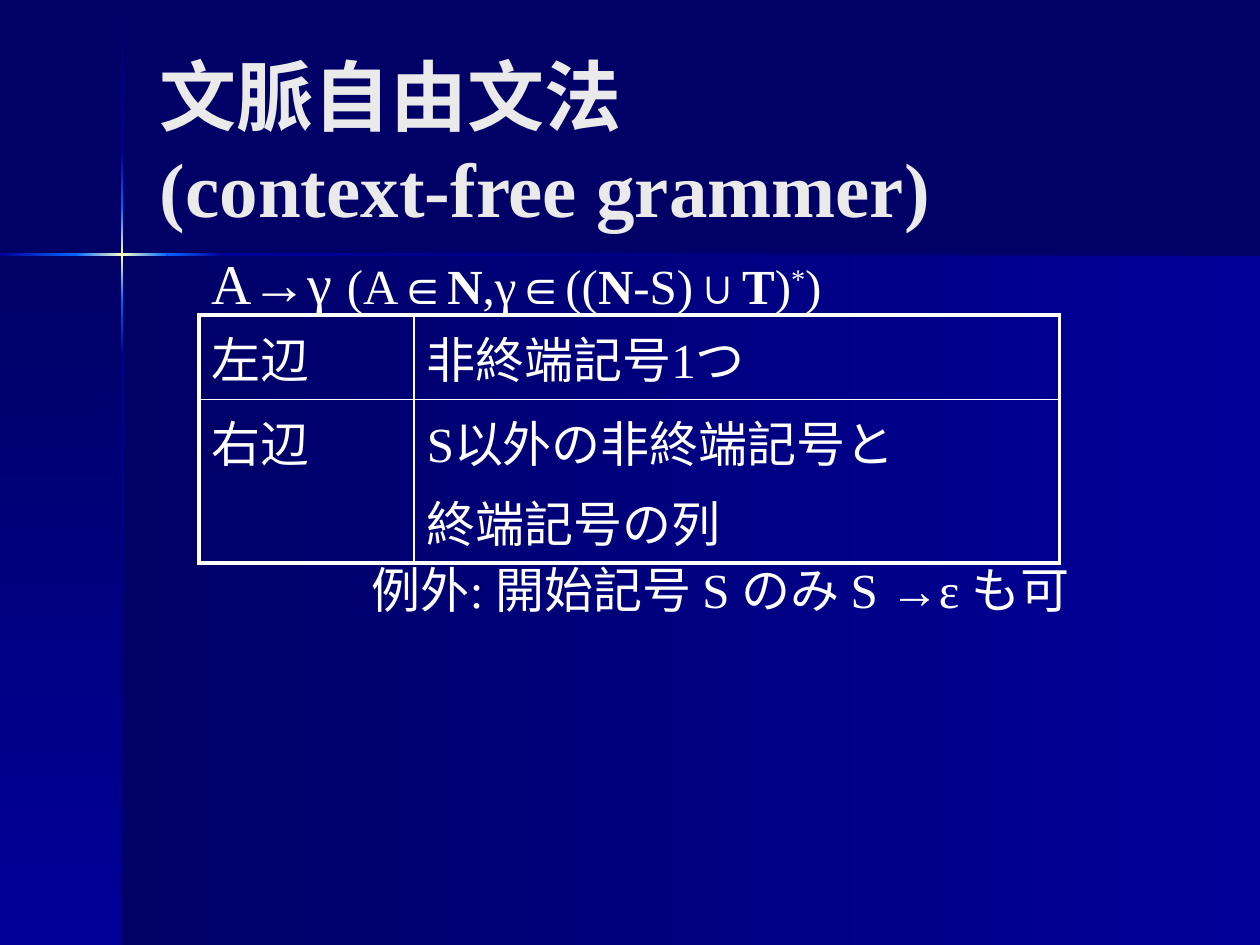
from lxml import etree
from pptx import Presentation
from pptx import util as u
from pptx.dml.color import RGBColor
from pptx.enum import shapes, text
from pptx.oxml.ns import qn

FONT = "Times New Roman"
NAVY, BLUE, BRIGHT, GLOW, WHITE = "000066", "000099", "0066FF", "FFFFCC", "FFFFFF"
LINE_WIDTH = 0.02


def color(value):
    return RGBColor.from_string(value)


def set_font(font, size, value=WHITE, bold=False):
    font.name = FONT
    font.size = u.Pt(size)
    font.bold = bold
    font.color.rgb = color(value)


def add_gradient(slide, box, start, end, vertical=False):
    shape = slide.shapes.add_shape(shapes.MSO_SHAPE.RECTANGLE, *map(u.Inches, box))
    shape.shadow.inherit = False
    shape.line.fill.background()
    shape.fill.gradient()
    shape.fill.gradient_angle = 270 if vertical else 0
    for stop, value in zip(shape.fill.gradient_stops, (start, end)):
        stop.color.rgb = color(value)


def add_backdrop(slide, width, height, cross_x, cross_y):
    """Two shaded panels and a glowing cross at their shared corner."""
    panel_height = height - cross_y
    add_gradient(slide, (cross_x, cross_y, width - cross_x, panel_height), NAVY, BLUE)
    add_gradient(slide, (0, cross_y, cross_x, panel_height), NAVY, BLUE, True)

    # Each arm fades between neighbouring stops
    column = [(0, NAVY), (1.21, BLUE), (1.65, BRIGHT), (cross_y, GLOW),
              (2.38, BRIGHT), (2.82, BLUE), (height, NAVY)]
    row = [(0, BLUE), (0.6, BRIGHT), (cross_x, GLOW),
           (1.33, BRIGHT), (1.77, BLUE), (width, NAVY)]
    for (top, start), (bottom, end) in zip(column, column[1:]):
        box = (cross_x - LINE_WIDTH / 2, top, LINE_WIDTH, bottom - top)
        add_gradient(slide, box, start, end, True)
    for (left, start), (right, end) in zip(row, row[1:]):
        box = (left, cross_y - LINE_WIDTH / 2, right - left, LINE_WIDTH)
        add_gradient(slide, box, start, end)


def add_text_frame(slide, box):
    frame = slide.shapes.add_textbox(*map(u.Inches, box)).text_frame
    frame.word_wrap = True
    return frame


def add_title(slide, box):
    frame = add_text_frame(slide, box)
    frame.vertical_anchor = text.MSO_ANCHOR.MIDDLE
    paragraph = frame.paragraphs[0]
    paragraph.text = "文脈自由文法\v(context-free grammer)"
    set_font(paragraph.font, 44, "EAEAEA", True)


def add_formula(slide, box):
    paragraph = add_text_frame(slide, box).paragraphs[0]
    parts = [("A→γ ", 32, False), ("(A∈", 28, False), ("N", 28, True),
             (",γ∈((", 28, False), ("N", 28, True), ("-S)∪", 28, False),
             ("T", 28, True), (")", 28, False), ("*", 28, False), (")", 28, False)]
    for wording, size, bold in parts:
        run = paragraph.add_run()
        run.text = wording
        set_font(run.font, size, bold=bold)
        if wording == "*":  # superscript
            run._r.get_or_add_rPr().set("baseline", "30000")


def set_borders(cell, widths):
    """Draw white borders; widths are left, right, top and bottom in points."""
    properties = cell._tc.get_or_add_tcPr()
    for index, (side, width) in enumerate(zip("LRTB", widths)):
        line = etree.Element(qn(f"a:ln{side}"), w=str(u.Pt(width)))
        fill = etree.SubElement(line, qn("a:solidFill"))
        etree.SubElement(fill, qn("a:srgbClr"), val=WHITE)
        properties.insert(index, line)


def add_rules_table(slide, box):
    rows = [("左辺", "非終端記号1つ"), ("右辺", "S以外の非終端記号と\n終端記号の列")]
    table = slide.shapes.add_table(2, 2, *map(u.Inches, box)).table
    table.first_row = table.horz_banding = False
    for column, share in zip(table.columns, (0.25, 0.75)):
        column.width = u.Inches(box[2] * share)
    # The second row holds two lines of text
    for row, share in zip(table.rows, (0.34, 0.66)):
        row.height = u.Inches(box[3] * share)

    outer, inner = 2.25, 1
    for r, wordings in enumerate(rows):
        for c, wording in enumerate(wordings):
            cell = table.cell(r, c)
            cell.text = wording
            cell.fill.background()
            for paragraph in cell.text_frame.paragraphs:
                paragraph.space_before = u.Pt(5.6)
                set_font(paragraph.font, 28)
            across = (outer, inner) if c == 0 else (inner, outer)
            down = (outer, inner) if r == 0 else (inner, outer)
            set_borders(cell, across + down)


def add_exception(slide, box):
    paragraph = add_text_frame(slide, box).paragraphs[0]
    paragraph.text = "例外: 開始記号 S のみ S →ε も可"
    paragraph.alignment = text.PP_ALIGN.CENTER
    set_font(paragraph.font, 28)


def main():
    presentation = Presentation()
    presentation.slide_width = u.Inches(10)
    presentation.slide_height = u.Inches(7.5)
    slide = presentation.slides.add_slide(presentation.slide_layouts[6])
    slide.background.fill.solid()
    slide.background.fill.fore_color.rgb = color(NAVY)

    add_backdrop(slide, 10, 7.5, 0.97, 2.02)
    add_title(slide, (1.17, 0.33, 8.25, 1.57))
    add_rules_table(slide, (1.58, 2.5, 6.83, 1.97))
    add_exception(slide, (2.76, 4.39, 5.92, 0.57))
    add_formula(slide, (1.58, 1.92, 5.54, 0.63))
    presentation.save("out.pptx")


if __name__ == "__main__":
    main()
